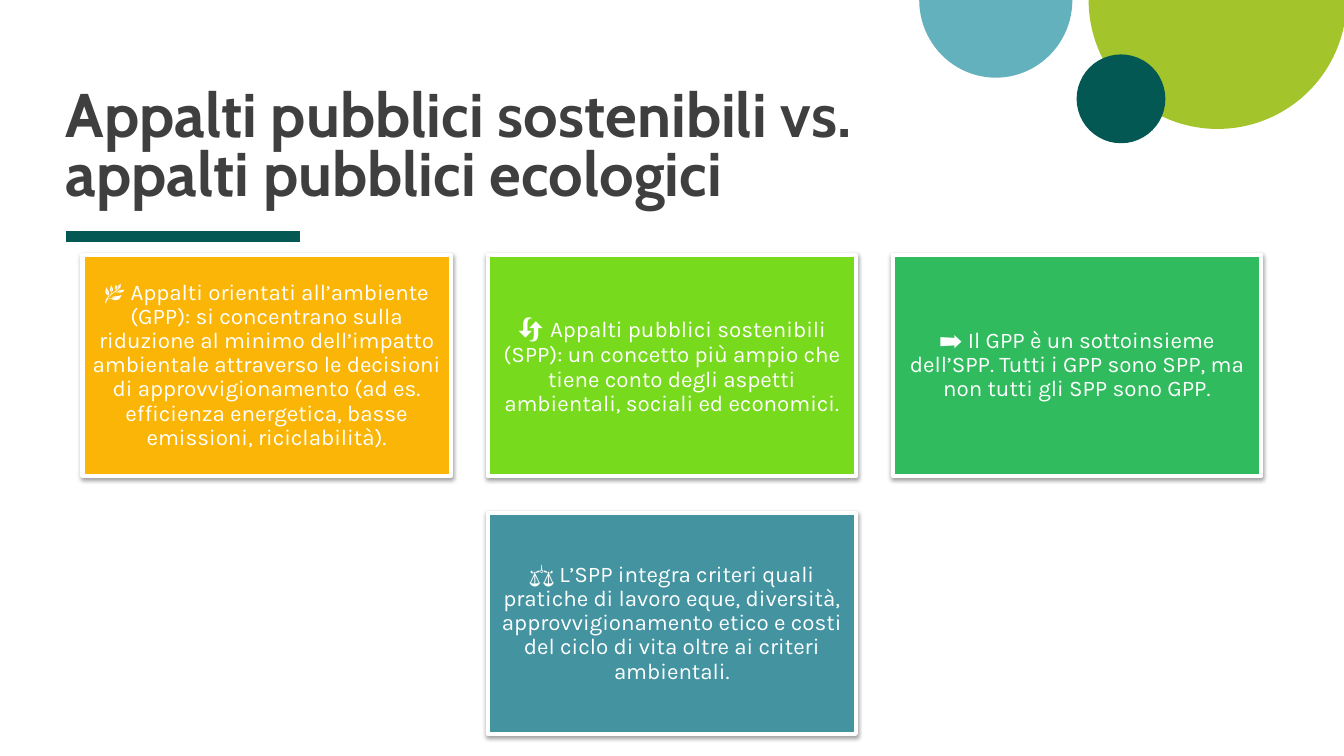
from lxml import etree
from pptx import Presentation, util as u
from pptx.dml.color import RGBColor
from pptx.enum import shapes, text
from pptx.oxml import parse_xml
from pptx.oxml.ns import nsdecls, qn

Pt = u.Pt
WHITE = RGBColor(0xFF, 0xFF, 0xFF)
CHARCOAL = RGBColor(0x3F, 0x3F, 0x3F)
DARK_TEAL = RGBColor(0x03, 0x58, 0x54)
LIME = RGBColor(0xA3, 0xC4, 0x2A)
SKY = RGBColor(0x64, 0xB1, 0xBE)
AMBER = RGBColor(0xFA, 0xB5, 0x06)
BRIGHT_GREEN = RGBColor(0x77, 0xDA, 0x1C)
GREEN = RGBColor(0x30, 0xBC, 0x5E)
STEEL_BLUE = RGBColor(0x43, 0x93, 0xA0)

CARD_SHADOW = (
    f'<a:effectLst {nsdecls("a")}>'
    '<a:outerShdw blurRad="39370" dist="20320" dir="5400000" rotWithShape="0">'
    '<a:srgbClr val="000000"><a:alpha val="37000"/></a:srgbClr>'
    '</a:outerShdw></a:effectLst>'
)


class SlideBuilder:
    title_font = "Cabin"
    body_font = "Karla"
    inset = 5.76

    def __init__(self, slide):
        self.slide = slide

    def title(self, wording, left, top, width, height):
        shape = self.slide.shapes.title
        shape.left, shape.top = Pt(left), Pt(top)
        shape.width, shape.height = Pt(width), Pt(height)
        frame = shape.text_frame
        frame.text = wording
        self.frame(frame, 0)
        paragraph = frame.paragraphs[0]
        paragraph.alignment = text.PP_ALIGN.LEFT
        paragraph.line_spacing = 0.8
        self.style(paragraph.runs[0], self.title_font, 44, CHARCOAL, True)

    def frame(self, frame, inset):
        frame.word_wrap = True
        frame.auto_size = text.MSO_AUTO_SIZE.NONE
        frame.vertical_anchor = text.MSO_ANCHOR.MIDDLE
        frame.margin_left = frame.margin_right = Pt(inset)
        frame.margin_top = frame.margin_bottom = Pt(inset)

    def style(self, run, font_name, size, color, bold=False):
        run.font.name = font_name
        run.font.size = Pt(size)
        run.font.color.rgb = color
        run.font.bold = bold

    def shape(self, kind, left, top, width, height, fill):
        shape = self.slide.shapes.add_shape(
            kind, Pt(left), Pt(top), Pt(width), Pt(height))
        shape.shadow.inherit = False
        shape.fill.solid()
        shape.fill.fore_color.rgb = fill
        shape.line.fill.background()
        return shape

    def half_disc(self, left, top, width, height, fill):
        disc = self.shape(shapes.MSO_SHAPE.PIE, left, top, width, height, fill)
        disc.adjustments[0] = 0
        disc.adjustments[1] = 108  # 180 degrees

    def rule(self, left, right, y, color, weight):
        line = self.slide.shapes.add_connector(
            shapes.MSO_CONNECTOR.STRAIGHT, Pt(left), Pt(y), Pt(right), Pt(y))
        line.line.color.rgb = color
        line.line.width = Pt(weight)
        etree.SubElement(line._element.spPr, qn("a:effectLst"))

    def card(self, left, top, width, height, fill, icon, icon_size, wording):
        card = self.shape(
            shapes.MSO_SHAPE.RECTANGLE, left, top, width, height, fill)
        card.line.color.rgb = WHITE
        card.line.width = Pt(3)
        properties = card._element.spPr
        properties.replace(
            properties.find(qn("a:effectLst")), parse_xml(CARD_SHADOW))
        self.frame(card.text_frame, self.inset)
        paragraph = card.text_frame.paragraphs[0]
        paragraph.alignment = text.PP_ALIGN.CENTER
        paragraph.line_spacing = 0.9
        for part, size in ((icon + " ", icon_size), (wording, 16)):
            run = paragraph.add_run()
            run.text = part
            self.style(run, self.body_font, size, WHITE)


# Column, row, fill, icon, icon size, wording
CARDS = [
    (0, 0, AMBER, "🌿", 16,
     "Appalti orientati all’ambiente (GPP): si concentrano sulla riduzione "
     "al minimo dell’impatto ambientale attraverso le decisioni di "
     "approvvigionamento (ad es. efficienza energetica, basse emissioni, "
     "riciclabilità)."),
    (1, 0, BRIGHT_GREEN, "🔄", 19,
     "Appalti pubblici sostenibili (SPP): un concetto più ampio che tiene "
     "conto degli aspetti ambientali, sociali ed economici."),
    (2, 0, GREEN, "➡️", 16,
     "Il GPP è un sottoinsieme dell’SPP. Tutti i GPP sono SPP, ma non tutti "
     "gli SPP sono GPP."),
    (1, 1, STEEL_BLUE, "⚖️", 16,
     "L’SPP integra criteri quali pratiche di lavoro eque, diversità, "
     "approvvigionamento etico e costi del ciclo di vita oltre ai criteri "
     "ambientali."),
]
CARD_LEFT, CARD_TOP = 59, 182.2
CARD_WIDTH, CARD_HEIGHT = 263, 157.8
CARD_GAP = 26.4


def main():
    presentation = Presentation()
    presentation.slide_width, presentation.slide_height = Pt(960), Pt(540)
    slide = presentation.slides.add_slide(presentation.slide_layouts[5])
    builder = SlideBuilder(slide)

    # Corner decoration and rule under the title
    builder.rule(46.8, 214.6, 169.2, DARK_TEAL, 8)
    builder.half_disc(777.6, -92.2, 184.3, 184.3, LIME)
    builder.half_disc(656.6, -55.4, 109.4, 110.9, SKY)
    builder.shape(shapes.MSO_SHAPE.OVAL, 769, 38.9, 63.4, 63.4, DARK_TEAL)

    # Title
    builder.title("Appalti pubblici sostenibili vs. appalti pubblici ecologici",
                  46.8, 44.6, 668.2, 123.8)

    # Cards: three across, one centred below
    for column, row, fill, icon, icon_size, wording in CARDS:
        builder.card(CARD_LEFT + column * (CARD_WIDTH + CARD_GAP),
                     CARD_TOP + row * (CARD_HEIGHT + CARD_GAP),
                     CARD_WIDTH, CARD_HEIGHT, fill, icon, icon_size, wording)

    presentation.save("out.pptx")


if __name__ == "__main__":
    main()
